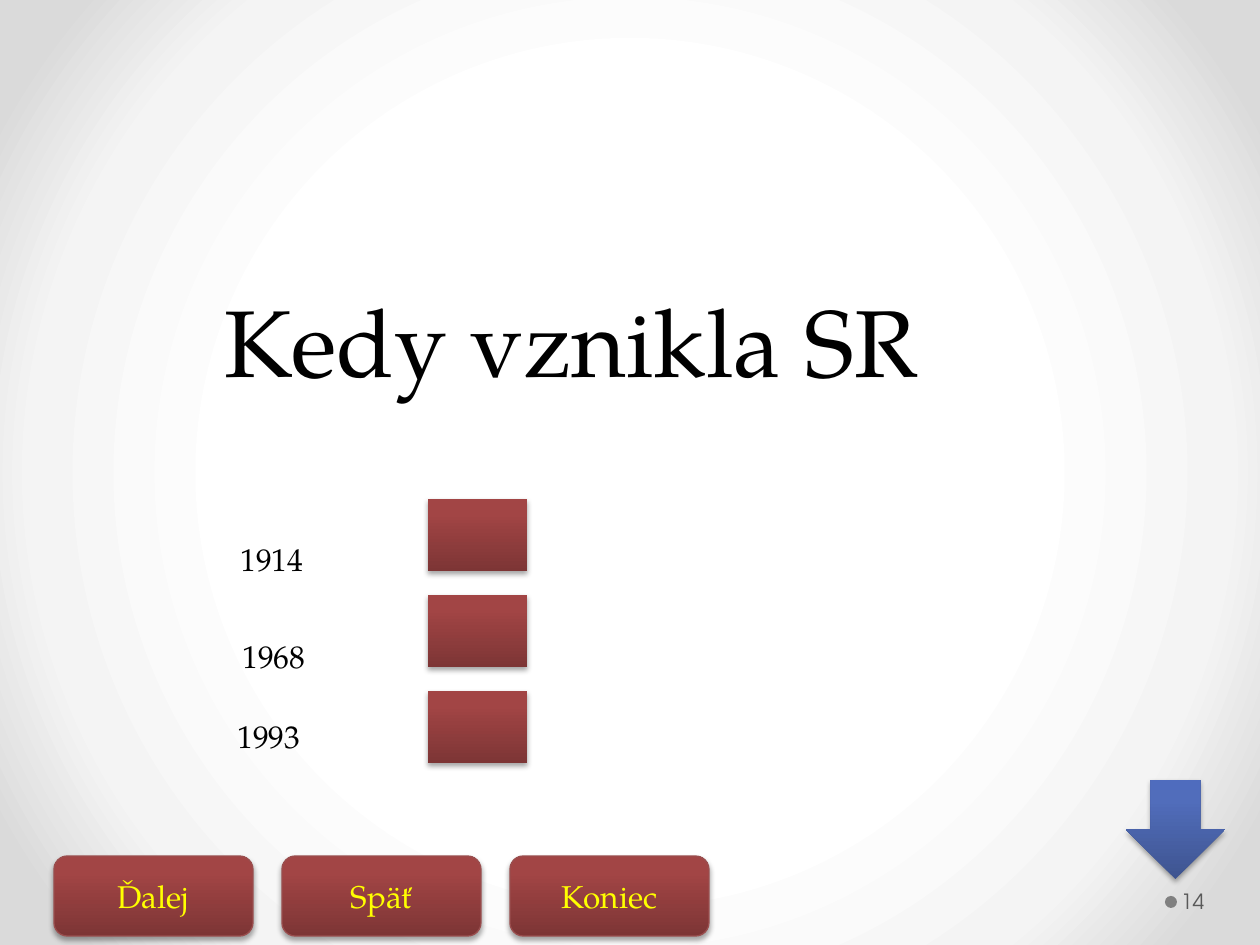
from lxml.etree import SubElement
from pptx import Presentation
from pptx.dml.color import RGBColor
from pptx.enum.shapes import MSO_SHAPE as Shape
from pptx.enum.text import MSO_ANCHOR as Anchor, MSO_AUTO_SIZE as AutoSize, PP_ALIGN as Align
from pptx.oxml.ns import qn
from pptx.util import Emu, Pt

PX = 914400 / 126
SERIF, SANS = "TeX Gyre Pagella", "TeX Gyre Adventor"
RED = [(0, "7D3535"), (80, "A24545"), (100, "A44343")]
BLUE = [(0, "3E5490"), (80, "516DBB"), (100, "4F6CBE")]
PAPER = [(50, "FFFFFF"), (76, "F4F4F4"), (92, "DADADA")]


def px(length):
    return Emu(round(length * PX))


def rgb(color):
    return RGBColor.from_string(color)


def paint_gradient(element, stops, circular=False):
    """Put a gradient in place of the first noFill found in the element."""
    blank = element.find(".//" + qn("a:noFill"))
    holder = blank.getparent()
    gradient = SubElement(holder, qn("a:gradFill"), rotWithShape="1")
    holder.replace(blank, gradient)
    stop_list = SubElement(gradient, qn("a:gsLst"))
    for position, color in stops:
        stop = SubElement(stop_list, qn("a:gs"), pos=str(position * 1000))
        SubElement(stop, qn("a:srgbClr"), val=color)
    if circular:
        route = SubElement(gradient, qn("a:path"), {"path": "circle"})
        SubElement(route, qn("a:fillToRect"), l="50000", t="50000", r="50000", b="50000")
    else:
        SubElement(gradient, qn("a:lin"), ang="16200000", scaled="0")


def add_shadow(shape):
    shape.shadow.inherit = False
    effects = shape.element.spPr.find(qn("a:effectLst"))
    shadow = SubElement(effects, qn("a:outerShdw"), blurRad=str(Pt(3.1)), dist=str(Pt(1.8)),
                        dir="5400000", rotWithShape="0")
    color = SubElement(shadow, qn("a:srgbClr"), val="000000")
    SubElement(color, qn("a:alpha"), val="35000")


class QuizSlide:
    def __init__(self, deck):
        self.slide = deck.slides.add_slide(deck.slide_layouts[5])
        self.slide.background.fill.background()
        paint_gradient(self.slide.element, PAPER, circular=True)

    def set_text(self, frame, text, size=18, color="000000", font=SERIF, align=Align.LEFT):
        frame.text = text
        para = frame.paragraphs[0]
        para.alignment = align
        for span in para.runs:
            span.font.size = Pt(size)
            span.font.name = font
            span.font.color.rgb = rgb(color)

    def title(self, text, left, top, width, height):
        box = self.slide.shapes.title
        box.left, box.top, box.width, box.height = map(px, (left, top, width, height))
        frame = box.text_frame
        frame.auto_size = AutoSize.SHAPE_TO_FIT_TEXT
        frame.vertical_anchor = Anchor.TOP
        self.set_text(frame, text, size=54, align=Align.CENTER)

    def label(self, text, left, top, width, wrap=True):
        box = self.slide.shapes.add_textbox(*map(px, (left, top, width, 50)))
        frame = box.text_frame
        frame.word_wrap = wrap
        frame.auto_size = AutoSize.SHAPE_TO_FIT_TEXT
        self.set_text(frame, text)

    def block(self, kind, left, top, width, height, stops):
        """Add a shape with a gradient, a soft shadow and no outline."""
        shape = self.slide.shapes.add_shape(kind, *map(px, (left, top, width, height)))
        shape.fill.background()
        paint_gradient(shape.element, stops)
        shape.line.fill.background()
        add_shadow(shape)
        return shape

    def button(self, text, left):
        shape = self.block(Shape.ROUNDED_RECTANGLE, left, 856, 199, 80, RED)
        shape.line.color.rgb = rgb("9A4E4E")
        shape.line.width = Pt(0.75)
        shape.text_frame.vertical_anchor = Anchor.MIDDLE
        self.set_text(shape.text_frame, text, color="FFFF00", align=Align.CENTER)

    def page_number(self, text):
        dot = self.slide.shapes.add_shape(Shape.OVAL, *map(px, (1165, 896, 12, 12)))
        dot.fill.solid()
        dot.fill.fore_color.rgb = rgb("808080")
        dot.line.fill.background()
        dot.shadow.inherit = False
        box = self.slide.shapes.add_textbox(*map(px, (1177, 876, 77, 50)))
        frame = box.text_frame
        frame.word_wrap = True
        frame.margin_left = px(4)
        frame.vertical_anchor = Anchor.MIDDLE
        self.set_text(frame, text, size=12, color="595959", font=SANS)


def main():
    deck = Presentation()
    deck.slide_width, deck.slide_height = px(1260), px(945)
    page = QuizSlide(deck)
    for column, text in enumerate(["Ďalej", "Späť", "Koniec"]):
        page.button(text, 54 + 228 * column)
    page.page_number("14")
    page.title("Kedy vznikla SR", 35, 277, 1072, 127)
    page.label("1914", 228, 534, 126)
    page.label("1968", 230, 631, 89, wrap=False)
    page.label("1993", 225, 711, 101)
    for row in range(3):
        page.block(Shape.RECTANGLE, 428, 499 + 96 * row, 99, 72, RED)
    page.block(Shape.DOWN_ARROW, 1126, 780, 99, 99, BLUE)
    deck.save("out.pptx")


if __name__ == "__main__":
    main()
